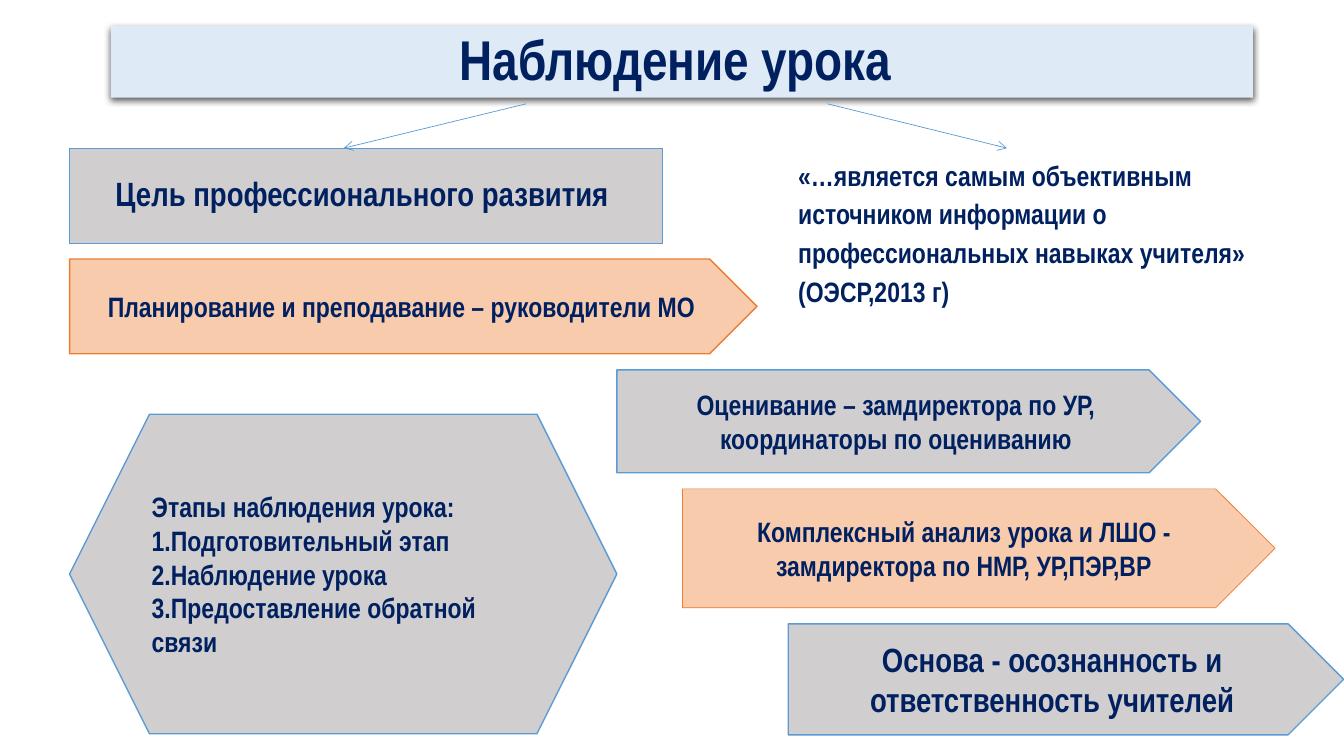
import pptx
import pptx.util
import pptx.dml.color
import pptx.enum.shapes
import pptx.enum.text
import pptx.oxml
import pptx.oxml.ns

Pt = pptx.util.Pt
SHAPE = pptx.enum.shapes.MSO_SHAPE
ALIGN = pptx.enum.text.PP_ALIGN
ANCHOR = pptx.enum.text.MSO_ANCHOR

COLORS = {
    "text": "002060",
    "banner": "DEEBF7",
    "grey": "D0CECE",
    "peach": "F8CBAD",
    "blue": "5B9BD5",
    "orange": "ED7D31",
}
LEFT = 49.68  # shared left edge of the goal, planning and stages boxes
DRAWING_NS = pptx.oxml.ns.nsdecls("a")


def rgb(name):
    return pptx.dml.color.RGBColor.from_string(COLORS[name])


def write(frame, lines, size, anchor=ANCHOR.MIDDLE, **paragraph_format):
    frame.word_wrap = True
    frame.vertical_anchor = anchor
    font_format = {"name": "Arial Narrow", "size": Pt(size), "bold": True}
    for index, line in enumerate(lines):
        paragraph = frame.paragraphs[0] if index == 0 else frame.add_paragraph()
        for key, value in paragraph_format.items():
            setattr(paragraph, key, value)
        run = paragraph.add_run()
        run.text = line
        for key, value in font_format.items():
            setattr(run.font, key, value)
        run.font.color.rgb = rgb("text")


def add_block(slide, kind, box, fill, line=None, width=1):
    block = slide.shapes.add_shape(kind, *map(Pt, box))
    block.shadow.inherit = False
    block.fill.solid()
    block.fill.fore_color.rgb = rgb(fill)
    if line:
        block.line.color.rgb = rgb(line)
        block.line.width = Pt(width)
    else:
        block.line.fill.background()
    return block


def add_banner(slide, box):
    banner = add_block(slide, SHAPE.RECTANGLE, box, "banner")
    write(banner.text_frame, ["Наблюдение урока "], 40, ANCHOR.BOTTOM,
          alignment=ALIGN.CENTER, line_spacing=0.9)
    # Soft shadow under the banner
    effects = banner._element.spPr.find(pptx.oxml.ns.qn("a:effectLst"))
    effects.append(pptx.oxml.parse_xml(
        f'<a:outerShdw {DRAWING_NS} blurRad="{Pt(4.5)}" dist="{Pt(1.5)}" dir="5400000">'
        '<a:srgbClr val="000000"><a:alpha val="63000"/></a:srgbClr></a:outerShdw>'))


def add_goal(slide, box):
    goal = add_block(slide, SHAPE.RECTANGLE, box, "grey", "blue", 0.5)
    write(goal.text_frame, ["Цель профессионального развития "], 24,
          alignment=ALIGN.CENTER, line_spacing=0.9)


def add_role(slide, box, text, size, fill, line, width):
    role = add_block(slide, SHAPE.PENTAGON, box, fill, line, width)
    write(role.text_frame, [text], size, alignment=ALIGN.CENTER)


def add_stages(slide, box):
    stages = add_block(slide, SHAPE.HEXAGON, box, "grey", "blue")
    write(stages.text_frame,
          ["Этапы наблюдения урока:", "1.Подготовительный этап",
           "2.Наблюдение урока", "3.Предоставление обратной связи"],
          20, alignment=ALIGN.LEFT)


def add_quote(slide, box):
    quote = slide.shapes.add_textbox(*map(Pt, box))
    write(quote.text_frame,
          ["«…является самым объективным источником информации о "
           "профессиональных навыках учителя» (ОЭСР,2013 г)"],
          20, ANCHOR.TOP, line_spacing=1.15)


def add_arrow(slide, start, end):
    arrow = slide.shapes.add_connector(
        pptx.enum.shapes.MSO_CONNECTOR.STRAIGHT, *map(Pt, start + end))
    arrow.line.color.rgb = rgb("blue")
    arrow.line.width = Pt(0.5)
    arrow.line._get_or_add_ln().append(
        pptx.oxml.parse_xml(f'<a:tailEnd {DRAWING_NS} type="arrow"/>'))
    arrow._element.spPr.append(pptx.oxml.parse_xml(f"<a:effectLst {DRAWING_NS}/>"))


def build_observation(slide):
    # Heading and the two branches below it
    add_banner(slide, (79.2, 18.72, 815.76, 51.12))
    add_goal(slide, (LEFT, 105.84, 423.36, 67.68))
    add_quote(slide, (563.04, 105.84, 378, 118.8))
    for start_x, end_x in ((591.12, 719.28), (375.84, 245.52)):
        add_arrow(slide, (start_x, 74.16), (end_x, 105.84))

    # Who observes and why
    roles = (
        ((LEFT, 185.04, 491.04, 67.68),
         "Планирование и преподавание – руководители МО", 20, "peach", "orange", 1),
        ((440.64, 264.24, 416.88, 73.44),
         "Оценивание – замдиректора по УР, координаторы по оцениванию",
         20, "grey", "blue", 1),
        ((487.44, 349.2, 423.36, 84.96),
         "Комплексный анализ урока и ЛШО - замдиректора по НМР, УР,ПЭР,ВР",
         20, "peach", "orange", 0.5),
        ((563.04, 445.68, 396.72, 79.2),
         "Основа - осознанность и ответственность учителей", 24, "grey", "blue", 1),
    )
    for role in roles:
        add_role(slide, *role)

    # Stages of the observation
    add_stages(slide, (LEFT, 295.92, 390.96, 228.24))


def main():
    deck = pptx.Presentation()
    deck.slide_width, deck.slide_height = Pt(960), Pt(540)
    build_observation(deck.slides.add_slide(deck.slide_layouts[6]))
    deck.save("out.pptx")


if __name__ == "__main__":
    main()
